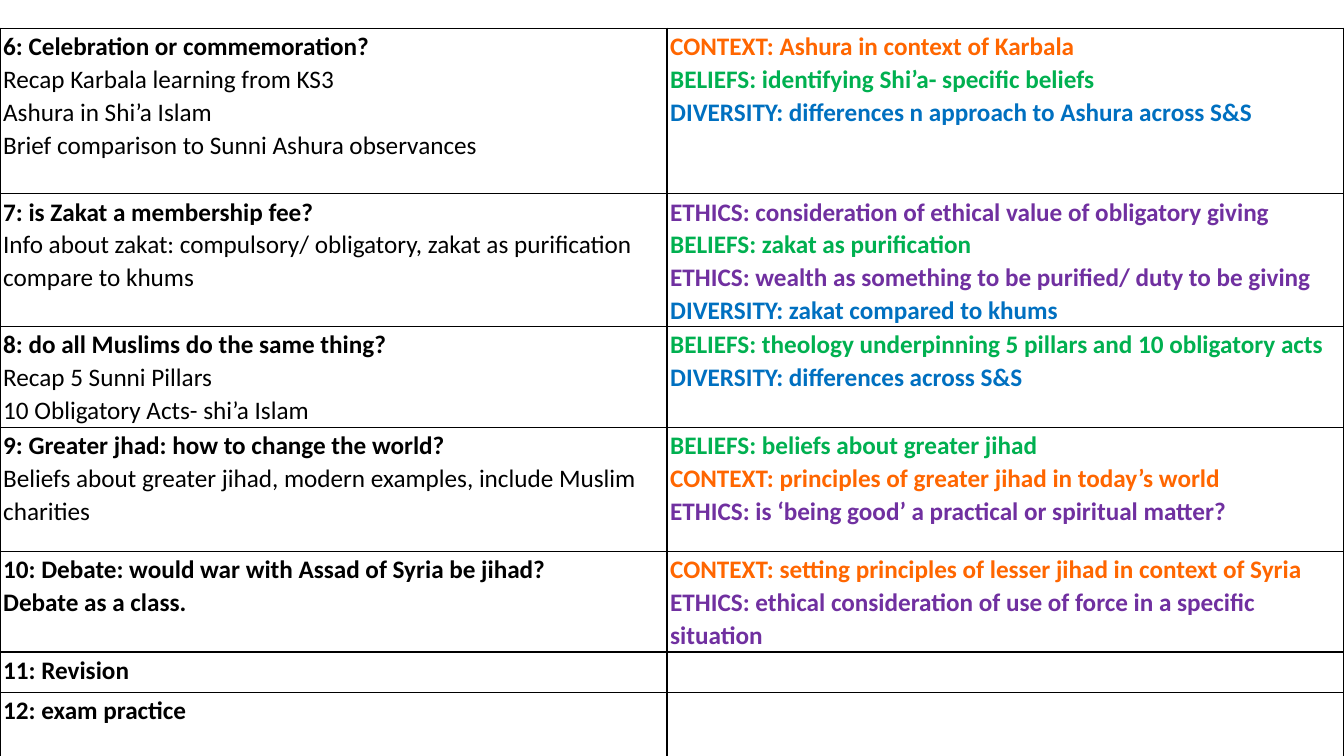
from lxml import etree
from pptx import Presentation
from pptx.dml.color import RGBColor
from pptx.oxml import ns
from pptx.util import Cm, Pt

BLACK = RGBColor(0x00, 0x00, 0x00)
THEMES = {
    "CONTEXT": RGBColor(0xFF, 0x66, 0x00),
    "BELIEFS": RGBColor(0x00, 0xB0, 0x50),
    "DIVERSITY": RGBColor(0x00, 0x70, 0xC0),
    "ETHICS": RGBColor(0x70, 0x30, 0xA0),
}
WIDTHS = (16.81, 17.05)

# Row height in cm, bold lines, plain lines, themed lines
LESSONS = [
    (4.17, ["6: Celebration or commemoration?"],
     ["Recap Karbala learning from KS3",
      "Ashura in Shi’a Islam",
      "Brief comparison to Sunni Ashura observances"],
     ["CONTEXT: Ashura in context of Karbala",
      "BELIEFS: identifying Shi’a- specific beliefs",
      "DIVERSITY: differences n approach to Ashura across S&S"]),
    (3.33, ["7: is Zakat a membership fee?"],
     ["Info about zakat: compulsory/ obligatory, zakat as purification "
      "compare to khums"],
     ["ETHICS: consideration of ethical value of obligatory giving",
      "BELIEFS: zakat as purification",
      "ETHICS: wealth as something to be purified/ duty to be giving",
      "DIVERSITY: zakat compared to khums"]),
    (2.54, ["8: do all Muslims do the same thing?"],
     ["Recap 5 Sunni Pillars",
      "10 Obligatory Acts- shi’a Islam"],
     ["BELIEFS: theology underpinning 5 pillars and 10 obligatory acts",
      "DIVERSITY: differences across S&S"]),
    (3.12, ["9: Greater jhad: how to change the world?"],
     ["Beliefs about greater jihad, modern examples, include Muslim "
      "charities"],
     ["BELIEFS: beliefs about greater jihad",
      "CONTEXT: principles of greater jihad in today’s world",
      "ETHICS: is ‘being good’ a practical or spiritual matter?"]),
    (2.54, ["10: Debate: would war with Assad of Syria be jihad?",
            "Debate as a class."], [],
     ["CONTEXT: setting principles of lesser jihad in context of Syria",
      "ETHICS: ethical consideration of use of force in a specific "
      "situation"]),
    (1.02, ["11: Revision"], [], []),
    (1.7, ["12: exam practice"], [], []),
]


def add_border(cell):
    props = cell._tc.get_or_add_tcPr()
    for spot, side in enumerate(("lnL", "lnR", "lnT", "lnB")):
        line = etree.Element(ns.qn(f"a:{side}"), w=str(Pt(1)))
        fill = etree.SubElement(line, ns.qn("a:solidFill"))
        etree.SubElement(fill, ns.qn("a:srgbClr"), val=str(BLACK))
        props.insert(spot, line)


def fill_cell(cell, lines):
    """Write (text, bold, colour) lines, one paragraph each."""
    cell.margin_left = cell.margin_right = Cm(0.08)
    cell.margin_top, cell.margin_bottom = Cm(0.03), Cm(0)
    cell.fill.background()
    add_border(cell)
    frame = cell.text_frame
    frame.text = "\n".join(line[0] for line in lines)
    for para, (_, bold, colour) in zip(frame.paragraphs, lines):
        para.line_spacing = 1.07
        font = para.runs[0].font
        font.name, font.size, font.bold = "Calibri", Pt(18), bold
        font.color.rgb = colour


def add_plan(slide):
    height = sum(lesson[0] for lesson in LESSONS)
    frame = slide.shapes.add_table(len(LESSONS), len(WIDTHS), Cm(0), Cm(0.71),
                                   Cm(sum(WIDTHS)), Cm(height))
    table = frame.table
    table.first_row = table.horz_banding = False
    for column, width in zip(table.columns, WIDTHS):
        column.width = Cm(width)
    for row, (tall, heads, notes, aims) in zip(table.rows, LESSONS):
        row.height = Cm(tall)
        left, right = row.cells
        fill_cell(left, [(head, True, BLACK) for head in heads]
                  + [(note, False, BLACK) for note in notes])
        fill_cell(right, [(aim, True, THEMES[aim.split(":")[0]])
                          for aim in aims])


def main():
    deck = Presentation()
    deck.slide_width, deck.slide_height = Cm(33.87), Cm(19.05)
    add_plan(deck.slides.add_slide(deck.slide_layouts[6]))
    deck.save("out.pptx")


if __name__ == "__main__":
    main()
